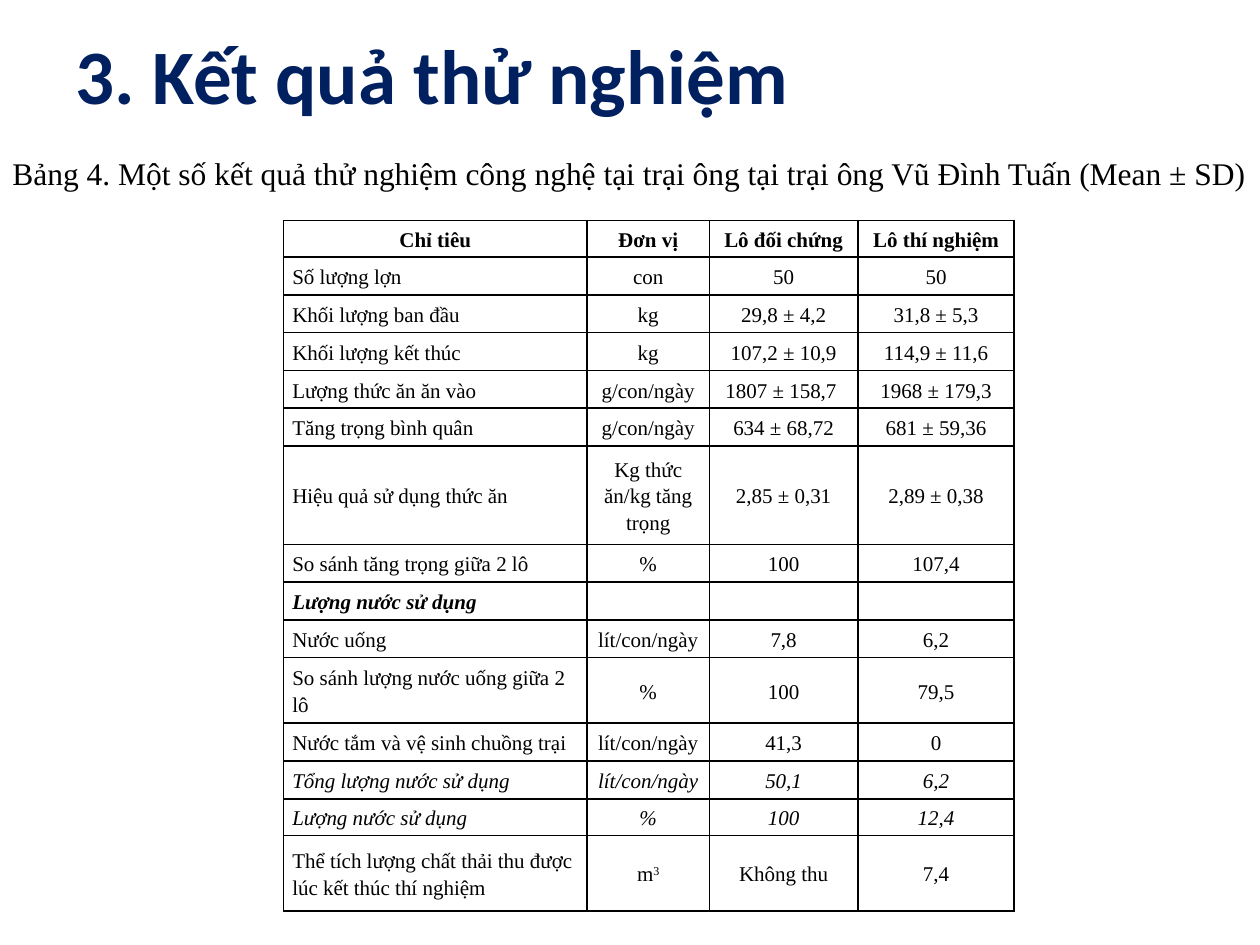
from lxml import etree
from pptx import Presentation
from pptx import util as u
from pptx.dml.color import RGBColor
from pptx.enum import text
from pptx.oxml.ns import qn

COLORS = {"title": "002060", "ink": "000000"}
SERIF = "Times New Roman"

COLUMN_WIDTHS = [2.41, 0.97, 1.18, 1.24]
ROW_HEIGHT = 0.3
SPECIAL_HEIGHTS = {0: 0.29, 6: 0.78, 10: 0.52, 13: 0.29, 14: 0.6}
ROW_STYLES = {
    0: {"bold": True},
    8: {"bold": True, "italic": True},
    12: {"italic": True},
    13: {"italic": True},
}
# A caret marks the start of a superscript
RESULTS = [
    ["Chỉ tiêu", "Đơn vị", "Lô đối chứng", "Lô thí nghiệm"],
    ["Số lượng lợn", "con", "50", "50"],
    ["Khối lượng ban đầu", "kg", "29,8 ± 4,2", "31,8 ± 5,3"],
    ["Khối lượng kết thúc", "kg", "107,2 ± 10,9", "114,9 ± 11,6"],
    ["Lượng thức ăn ăn vào", "g/con/ngày", "1807 ± 158,7 ", "1968 ± 179,3"],
    ["Tăng trọng bình quân", "g/con/ngày", "634 ± 68,72", "681 ± 59,36"],
    ["Hiệu quả sử dụng thức ăn", "Kg thức ăn/kg tăng trọng", "2,85 ± 0,31", "2,89 ± 0,38"],
    ["So sánh tăng trọng giữa 2 lô", "%", "100", "107,4"],
    ["Lượng nước sử dụng", "", "", ""],
    ["Nước uống", "lít/con/ngày", "7,8", "6,2"],
    ["So sánh lượng nước uống giữa 2 lô", "%", "100", "79,5"],
    ["Nước tắm và vệ sinh chuồng trại", "lít/con/ngày", "41,3", "0"],
    ["Tổng lượng nước sử dụng", "lít/con/ngày", "50,1", "6,2"],
    ["Lượng nước sử dụng", "%", "100", "12,4"],
    ["Thể tích lượng chất thải thu được lúc kết thúc thí nghiệm", "m^3", "Không thu", "7,4"],
]


def write(para, words, size=12, font=SERIF, color="ink", bold=False, italic=False,
          align=text.PP_ALIGN.LEFT):
    para.alignment = align
    base, _, raised = words.partition("^")
    for part in filter(None, (base, raised)):
        span = para.add_run()
        span.text = part
        span.font.size = u.Pt(size)
        span.font.name = font
        span.font.bold = bold
        span.font.italic = italic
        span.font.color.rgb = RGBColor.from_string(COLORS[color])
    if raised:
        span.font._element.set("baseline", "30000")
    if not words:
        etree.SubElement(para._p, qn("a:endParaRPr"), sz=str(size * 100))


def add_borders(cell):
    props = cell._tc.get_or_add_tcPr()
    for index, side in enumerate(("a:lnL", "a:lnR", "a:lnT", "a:lnB")):
        line = etree.Element(qn(side), w=str(u.Pt(1)))
        fill = etree.SubElement(line, qn("a:solidFill"))
        etree.SubElement(fill, qn("a:srgbClr"), val=COLORS["ink"])
        props.insert(index, line)


def format_cell(cell, words, **style):
    cell.fill.background()
    cell.vertical_anchor = text.MSO_ANCHOR.MIDDLE
    cell.margin_left = cell.margin_right = u.Inches(0.07)
    cell.margin_top = cell.margin_bottom = 0
    para = cell.text_frame.paragraphs[0]
    if words:
        para.line_spacing = 1.15
        para.space_before = para.space_after = u.Pt(3)
    write(para, words, **style)
    add_borders(cell)


def place_title(page, left, top, width, height):
    title = page.shapes.title
    title.left, title.top, title.width, title.height = left, top, width, height
    title.text_frame.vertical_anchor = text.MSO_ANCHOR.MIDDLE
    write(title.text_frame.paragraphs[0], "3. Kết quả thử nghiệm",
          size=44, font="Calibri", color="title", bold=True)


def add_results(page, left, top, width, height):
    table = page.shapes.add_table(len(RESULTS), len(COLUMN_WIDTHS),
                                  left, top, width, height).table
    table.first_row = table.horz_banding = False
    for column, inches in zip(table.columns, COLUMN_WIDTHS):
        column.width = u.Inches(inches)
    for r, values in enumerate(RESULTS):
        table.rows[r].height = u.Inches(SPECIAL_HEIGHTS.get(r, ROW_HEIGHT))
        for c, words in enumerate(values):
            centred = r == 0 or c > 0
            align = text.PP_ALIGN.CENTER if centred else text.PP_ALIGN.LEFT
            format_cell(table.cell(r, c), words, align=align, **ROW_STYLES.get(r, {}))


def add_caption(page, left, top, width, height):
    box = page.shapes.add_textbox(left, top, width, height)
    box.text_frame.word_wrap = True
    write(box.text_frame.paragraphs[0],
          "Bảng 4. Một số kết quả thử nghiệm công nghệ tại trại ông tại trại ông "
          "Vũ Đình Tuấn (Mean ± SD)", size=18)


def main():
    deck = Presentation()
    deck.slide_width, deck.slide_height = u.Inches(10), u.Inches(7.5)
    page = deck.slides.add_slide(deck.slide_layouts[5])
    # Heading
    place_title(page, u.Inches(0.5), u.Inches(0.17), u.Inches(9), u.Inches(0.83))
    # Table of trial results and its caption
    add_results(page, u.Inches(2.25), u.Inches(1.75), u.Inches(5.8), u.Inches(5.45))
    add_caption(page, u.Inches(0), u.Inches(1.17), u.Inches(10.28), u.Inches(1.01))
    deck.save("out.pptx")


if __name__ == "__main__":
    main()
